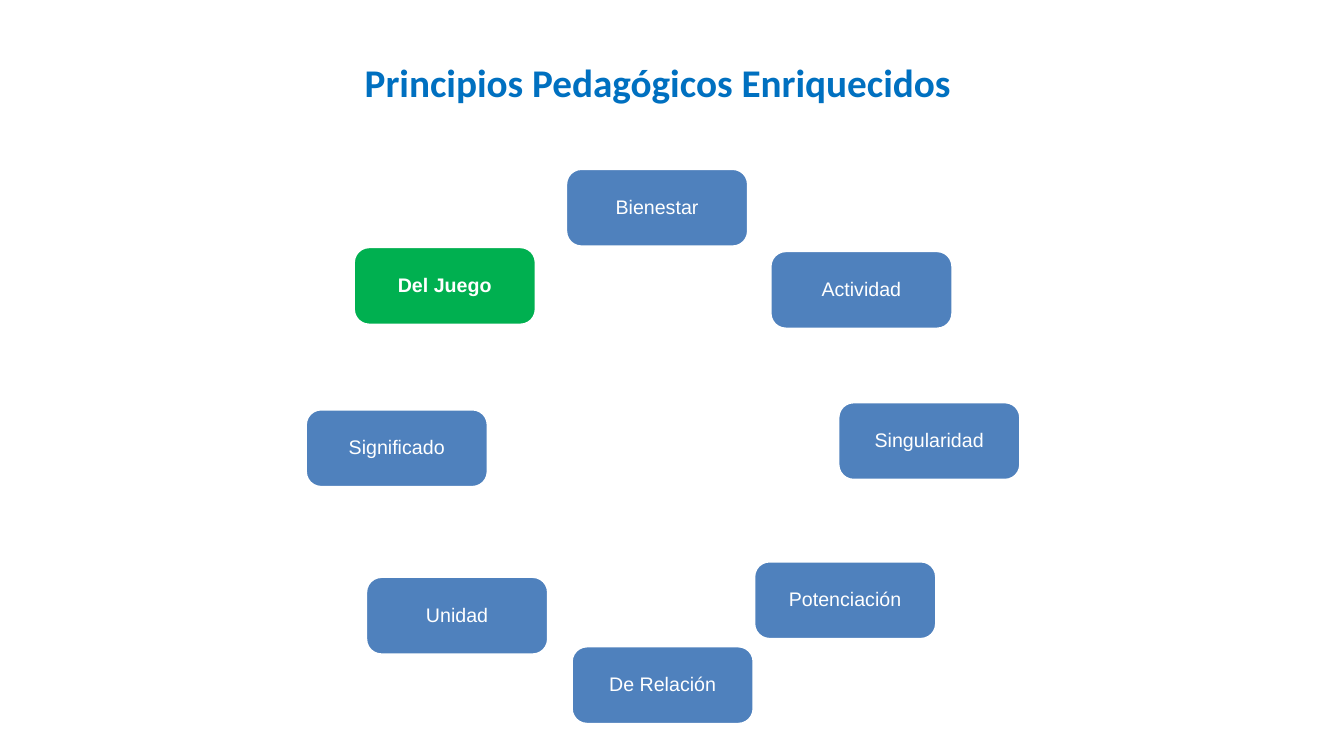
from pptx import Presentation
from pptx.dml.color import RGBColor
from pptx.enum.shapes import MSO_SHAPE
from pptx.enum.text import MSO_ANCHOR, PP_ALIGN
from pptx.util import Cm, Pt

ROUNDED = MSO_SHAPE.ROUNDED_RECTANGLE
CENTER = PP_ALIGN.CENTER
MIDDLE = MSO_ANCHOR.MIDDLE

BLUE, GREEN, WHITE, TITLE_BLUE = "4F81BD", "00B050", "FFFFFF", "0070C0"

# Box size in cm
BOX_W, BOX_H = 4.6, 1.97

# Principle, left and top in cm, clockwise from the top
PRINCIPLES = [
    ("Bienestar", 14.26, 4.25),
    ("Actividad", 19.41, 6.32),
    ("Singularidad", 21.12, 10.13),
    ("Potenciación", 19.0, 14.14),
    ("De Relación", 14.4, 16.28),
    ("Unidad", 9.22, 14.53),
    ("Significado", 7.7, 10.31),
    ("Del Juego", 8.91, 6.22),
]
HIGHLIGHT = "Del Juego"


def rgb(color):
    return RGBColor.from_string(color)


def write(tf, text, *, size, font, color, bold=False, spacing=None):
    tf.word_wrap = True
    p = tf.paragraphs[0]
    p.alignment = CENTER
    p.line_spacing = spacing
    r = p.add_run()
    r.text = text
    r.font.size = Pt(size)
    r.font.name = font
    r.font.bold = bold
    r.font.color.rgb = rgb(color)


def add_box(s, text, x, y, fill, bold):
    sp = s.shapes.add_shape(ROUNDED, Cm(x), Cm(y), Cm(BOX_W), Cm(BOX_H))
    sp.adjustments[0] = 0.2
    sp.shadow.inherit = False
    sp.fill.solid()
    sp.fill.fore_color.rgb = rgb(fill)
    sp.line.color.rgb = rgb(WHITE)
    sp.line.width = Pt(2)
    tf = sp.text_frame
    tf.vertical_anchor = MIDDLE
    tf.margin_left = tf.margin_right = tf.margin_top = tf.margin_bottom = Cm(0.15)
    write(tf, text, size=14, font="Arial", color=WHITE, bold=bold, spacing=0.9)


def add_title(s, text):
    sp = s.shapes.add_textbox(Cm(4.57), Cm(1.35), Cm(24.23), Cm(1.45))
    write(sp.text_frame, text, size=28, font="Calibri", color=TITLE_BLUE, bold=True)


def main():
    prs = Presentation()
    prs.slide_width, prs.slide_height = Cm(33.87), Cm(19.05)
    s = prs.slides.add_slide(prs.slide_layouts[6])

    # Ring of principles
    for text, x, y in PRINCIPLES:
        marked = text == HIGHLIGHT
        add_box(s, text, x, y, GREEN if marked else BLUE, marked)

    # Title
    add_title(s, "Principios Pedagógicos Enriquecidos ")

    prs.save("out.pptx")


if __name__ == "__main__":
    main()
